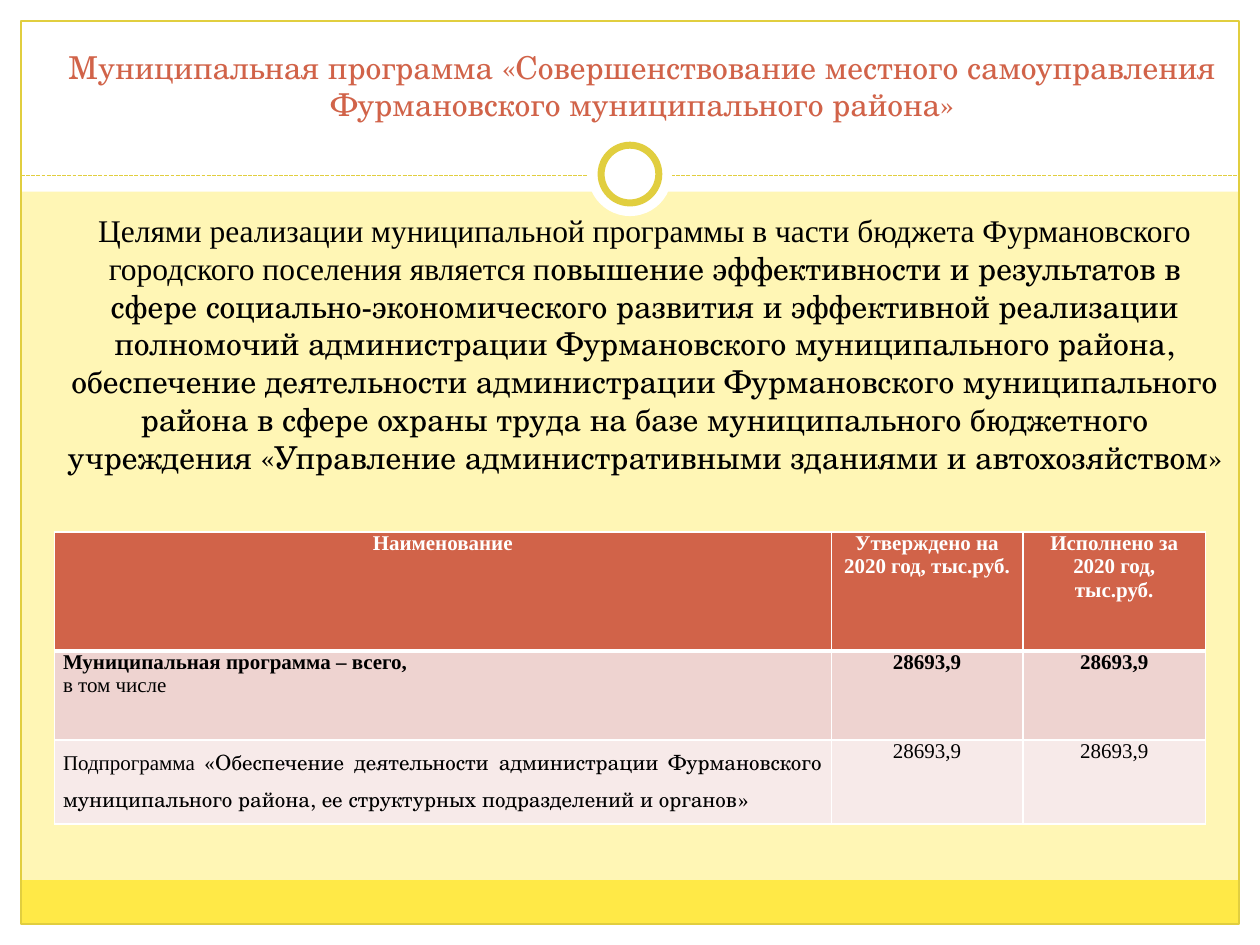
from dataclasses import dataclass

from lxml import etree
from pptx import Presentation
from pptx.dml import color
from pptx.enum import dml, shapes, text
from pptx.oxml import ns
from pptx.util import Pt

KIND = shapes.MSO_SHAPE
ALIGN = text.PP_ALIGN


@dataclass(frozen=True)
class Theme:
    """Colours, fonts and type sizes."""
    back: str = "FFF6B5"
    white: str = "FFFFFF"
    black: str = "000000"
    gold: str = "E1CE3F"
    band: str = "FFE947"
    red: str = "D16349"
    rose: str = "EED3D0"
    pale: str = "F7EAE9"
    serif: str = "Times New Roman"
    schola: str = "TeX Gyre Schola"
    large: int = 18
    small: int = 12


T = Theme()


def rgb(code):
    """Turn a hex code into a colour."""
    return color.RGBColor.from_string(code)


def shape(slide, kind, box, fill=None, line=None, width=0.75):
    """Add a preset shape without shadow."""
    item = slide.shapes.add_shape(kind, *map(Pt, box))
    item.shadow.inherit = False
    if fill:
        item.fill.solid()
        item.fill.fore_color.rgb = rgb(fill)
    else:
        item.fill.background()
    if line:
        item.line.color.rgb = rgb(line)
        item.line.width = Pt(width)
    else:
        item.line.fill.background()


def dash(slide, left, right, y):
    """Add a level dashed line."""
    item = slide.shapes.add_connector(
        shapes.MSO_CONNECTOR.STRAIGHT, Pt(left), Pt(y), Pt(right), Pt(y))
    item.line.color.rgb = rgb(T.gold)
    item.line.width = Pt(0.75)
    item.line.dash_style = dml.MSO_LINE.SQUARE_DOT
    etree.SubElement(item._element.spPr, ns.qn("a:effectLst"))


def write(par, runs, size, tint, align=ALIGN.CENTER, bold=False):
    """Fill a paragraph with (words, font) runs."""
    par.alignment = align
    for words, face in runs:
        run = par.add_run()
        run.text = words
        run.font.name = face
        run.font.size = Pt(size)
        run.font.bold = bold
        run.font.color.rgb = rgb(tint)


def label(slide, box, runs, tint, anchor):
    """Add a wrapped text box with one paragraph."""
    frame = slide.shapes.add_textbox(*map(Pt, box)).text_frame
    frame.word_wrap = True
    frame.vertical_anchor = anchor
    write(frame.paragraphs[0], runs, T.large, tint)


def edge(cell, side, width):
    """Draw one white border of a cell."""
    line = etree.SubElement(cell._tc.get_or_add_tcPr(), ns.qn(f"a:ln{side}"),
                            w=str(Pt(width)))
    fill = etree.SubElement(line, ns.qn("a:solidFill"))
    etree.SubElement(fill, ns.qn("a:srgbClr"), val=T.white)


def style(cell, fill, head, under):
    """Set the margins, borders and fill of a cell."""
    cell.margin_left = cell.margin_right = Pt(5)
    cell.margin_top = cell.margin_bottom = 0
    for side in "LRTB":
        thick = side == "B" and head or side == "T" and under
        edge(cell, side, 3 if thick else 1)
    cell.fill.solid()
    cell.fill.fore_color.rgb = rgb(fill)


def table(slide, box, cols, rows, data):
    """Add the table; each cell is a list of (runs, bold) paragraphs."""
    grid = slide.shapes.add_table(len(rows), len(cols), *map(Pt, box)).table
    for col, width in zip(grid.columns, cols):
        col.width = Pt(width)
    for row, height in zip(grid.rows, rows):
        row.height = Pt(height)
    for i, (fill, tint, line) in enumerate(data):
        for j, pars in enumerate(line):
            cell = grid.cell(i, j)
            style(cell, fill, i == 0, i == 1)
            align = ALIGN.JUSTIFY if i and not j else ALIGN.CENTER
            for k, (runs, bold) in enumerate(pars):
                frame = cell.text_frame
                par = frame.add_paragraph() if k else frame.paragraphs[0]
                write(par, runs, T.small, tint, align, bold)
    return grid


def plain(words, bold=False):
    """Make a one-run paragraph in the serif font."""
    return [(words, T.serif)], bold


def frame(slide):
    """Draw the white margins, gold frame and ring."""
    for box in ((0, 528, 720, 12), (0, 0, 720, 109.5),
                (0, 0, 12, 540), (708, 0, 12, 540)):
        shape(slide, KIND.RECTANGLE, box, T.white)
    shape(slide, KIND.RECTANGLE, (12, 503, 696, 25), T.band)
    shape(slide, KIND.RECTANGLE, (12, 12, 696, 516), line=T.gold)
    dash(slide, 12, 708, 100.5)
    shape(slide, KIND.OVAL, (336, 75.5, 48, 48), T.white)
    shape(slide, KIND.OVAL, (343.5, 83, 33, 33), T.white, T.gold, 4)


def main():
    """Build and save the slide."""
    deck = Presentation()
    deck.slide_width, deck.slide_height = Pt(720), Pt(540)
    slide = deck.slides.add_slide(deck.slide_layouts[6])
    slide.background.fill.solid()
    slide.background.fill.fore_color.rgb = rgb(T.back)
    frame(slide)
    label(slide, (31, 26, 672, 48), [
        ("Муниципальная программа «Совершенствование местного самоуправления "
         "Фурмановского муниципального района»", T.schola),
    ], T.red, text.MSO_ANCHOR.BOTTOM)
    total, part = [plain("28693,9", True)], [plain("28693,9")]
    grid = table(slide, (31, 304, 658, 167), (444, 109.5, 104.5), (68, 51, 48), [
        (T.red, T.white, [
            [plain("Наименование", True)],
            [plain("Утверждено на 2020 год, тыс.руб.", True)],
            [plain("Исполнено за 2020 год, тыс.руб.", True)]]),
        (T.rose, T.black, [
            [plain("Муниципальная программа – всего,", True),
             plain("в том числе")], total, total]),
        (T.pale, T.black, [
            [([("Подпрограмма «", T.serif),
               ("Обеспечение деятельности администрации Фурмановского "
                "муниципального района, ее структурных подразделений и органов",
                T.schola),
               ("»", T.serif)], False)], part, part]),
    ])
    grid.cell(2, 0).text_frame.paragraphs[0].line_spacing = 1.2
    label(slide, (31, 117, 675, 160), [
        ("Целями реализации муниципальной программы в части бюджета "
         "Фурмановского городского поселения является п", T.serif),
        ("овышение эффективности и результатов в сфере социально-экономического "
         "развития и эффективной реализации полномочий администрации "
         "Фурмановского муниципального района, обеспечение деятельности "
         "администрации Фурмановского муниципального района в сфере охраны труда "
         "на базе муниципального бюджетного учреждения «Управление "
         "административными зданиями и автохозяйством»", T.schola),
    ], T.black, text.MSO_ANCHOR.TOP)
    deck.save("out.pptx")


if __name__ == "__main__":
    main()
